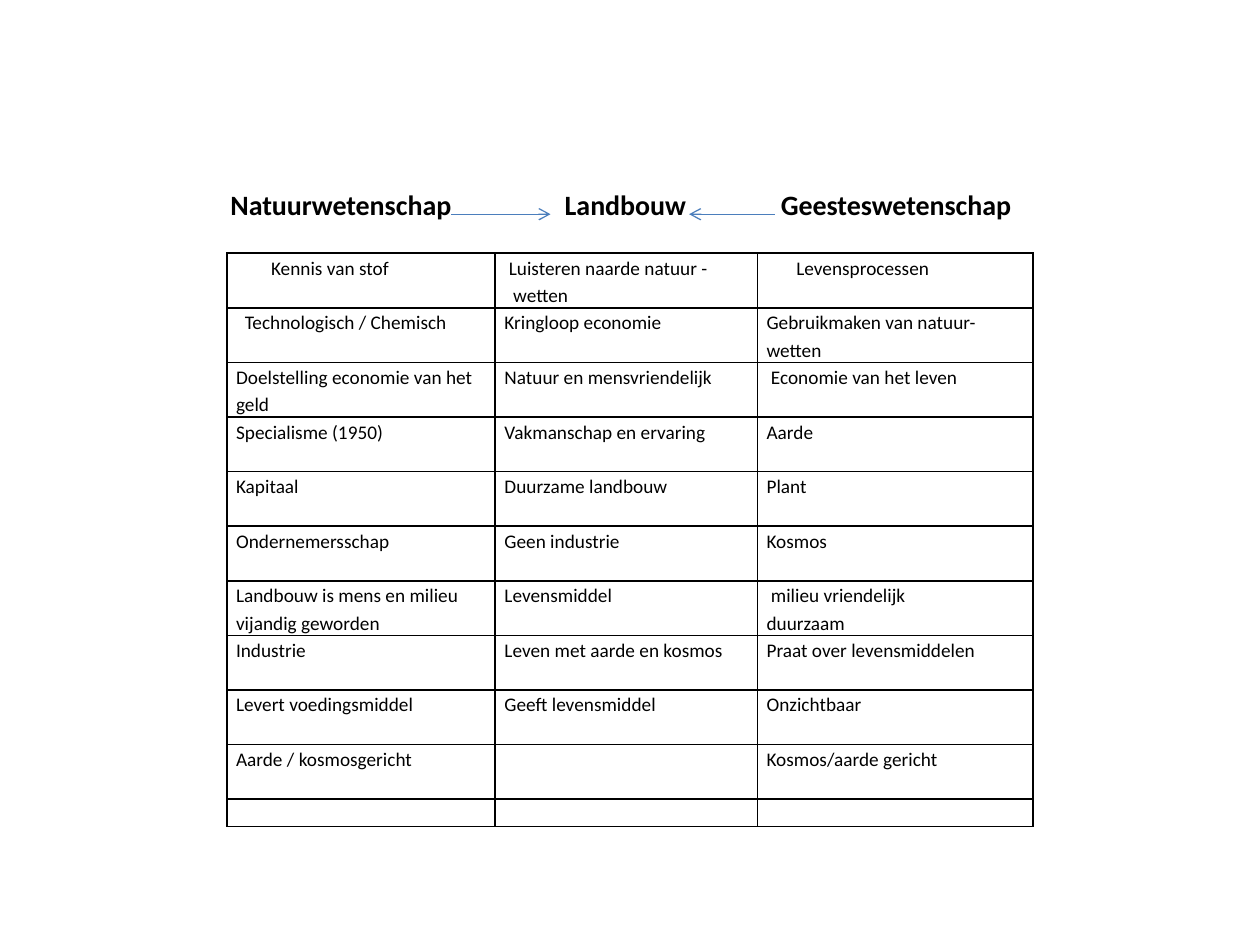
from lxml.etree import SubElement
from pptx import Presentation
from pptx.dml.color import RGBColor
from pptx.enum.shapes import MSO_CONNECTOR
from pptx.enum.text import MSO_ANCHOR
from pptx.oxml.ns import qn
from pptx.util import Pt

BLACK = RGBColor(0x00, 0x00, 0x00)
BLUE = RGBColor(0x4B, 0x7E, 0xBC)

COL_WIDTHS = [153.4, 149.8, 157.6]
ROW_HEIGHT, LAST_HEIGHT = 31.2, 15.7
ROWS = [
    ["Kennis van stof", "Luisteren naarde natuur -\nwetten", "Levensprocessen"],
    ["Technologisch / Chemisch", "Kringloop economie", "Gebruikmaken van natuur-wetten"],
    ["Doelstelling economie van het geld", "Natuur en mensvriendelijk", "Economie van het leven"],
    ["Specialisme (1950)", "Vakmanschap en ervaring", "Aarde"],
    ["Kapitaal", "Duurzame landbouw", "Plant"],
    ["Ondernemersschap", "Geen industrie", "Kosmos"],
    ["Landbouw is mens en milieu vijandig geworden", "Levensmiddel", "milieu vriendelijk\nduurzaam"],
    ["Industrie", "Leven met aarde en kosmos", "Praat over levensmiddelen"],
    ["Levert voedingsmiddel", "Geeft levensmiddel", "Onzichtbaar"],
    ["Aarde / kosmosgericht", "", "Kosmos/aarde gericht"],
    ["", "", ""],
]
INDENTS = {
    "Kennis van stof": 20,
    "Luisteren naarde natuur -": 2.5,
    "wetten": 5,
    "Levensprocessen": 17,
    "Technologisch / Chemisch": 5,
    "Economie van het leven": 2.5,
    "milieu vriendelijk": 2.5,
}
CELL_FORMAT = {"margin_left": Pt(5.3), "margin_right": Pt(5.3), "margin_top": 0, "margin_bottom": 0}
CELL_FONT = {"size": Pt(11), "name": "Calibri"}
HEADING_FONT = {"size": Pt(16), "name": "Calibri", "bold": True}


def set_attrs(obj, values):
    for name, value in values.items():
        setattr(obj, name, value)


def add_borders(cell):
    tcPr = cell._tc.get_or_add_tcPr()
    for i, side in enumerate(("a:lnL", "a:lnR", "a:lnT", "a:lnB")):
        ln = tcPr.makeelement(qn(side), {"w": str(Pt(1))})
        fill = SubElement(ln, qn("a:solidFill"))
        SubElement(fill, qn("a:srgbClr"), val=str(BLACK))
        tcPr.insert(i, ln)


prs = Presentation()
prs.slide_width, prs.slide_height = Pt(720), Pt(540)
s = prs.slides.add_slide(prs.slide_layouts[6])

# Comparison table
height = ROW_HEIGHT * (len(ROWS) - 1) + LAST_HEIGHT
table = s.shapes.add_table(len(ROWS), len(COL_WIDTHS), Pt(129.6), Pt(144.7),
                           Pt(sum(COL_WIDTHS)), Pt(height)).table
set_attrs(table, {"first_row": False, "horz_banding": False})
for col, width in zip(table.columns, COL_WIDTHS):
    col.width = Pt(width)
for row, texts in zip(table.rows, ROWS):
    row.height = Pt(ROW_HEIGHT if any(texts) else LAST_HEIGHT)
    for cell, text in zip(row.cells, texts):
        set_attrs(cell, CELL_FORMAT)
        cell.fill.background()
        add_borders(cell)
        cell.text = text
        for p in cell.text_frame.paragraphs:
            p.line_spacing = 1.15
            if p.text in INDENTS:
                p._p.get_or_add_pPr().set("marL", str(Pt(INDENTS[p.text])))
            for r in p.runs:
                set_attrs(r.font, CELL_FONT)
                r.font.color.rgb = BLACK
            if not p.runs:
                SubElement(p._p, qn("a:endParaRPr"), sz="1100")

# Arrows pointing to the middle heading
for x1, x2 in [(257.8, 314.6), (442.8, 393.8)]:
    line = s.shapes.add_connector(MSO_CONNECTOR.STRAIGHT, Pt(x1), Pt(122.4), Pt(x2), Pt(122.4))
    line.line.color.rgb = BLUE
    line.line.width = Pt(0.75)
    SubElement(line.line._get_or_add_ln(), qn("a:tailEnd"), type="arrow")
    SubElement(line._element.spPr, qn("a:effectLst"))

# Headings, spaced with tab stops
sp = s.shapes.add_textbox(Pt(124.6), Pt(107), Pt(590), Pt(36))
tf = sp.text_frame
set_attrs(tf, {"word_wrap": True, "vertical_anchor": MSO_ANCHOR.TOP, "margin_top": 0, "margin_bottom": 0})
p = tf.paragraphs[0]
r = p.add_run()
r.text = "Natuurwetenschap\tLandbouw\tGeesteswetenschap"
set_attrs(r.font, HEADING_FONT)
r.font.color.rgb = BLACK
tabs = SubElement(p._p.get_or_add_pPr(), qn("a:tabLst"))
for pos in (191, 314.5):
    SubElement(tabs, qn("a:tab"), pos=str(Pt(pos)), algn="l")

prs.save("out.pptx")
